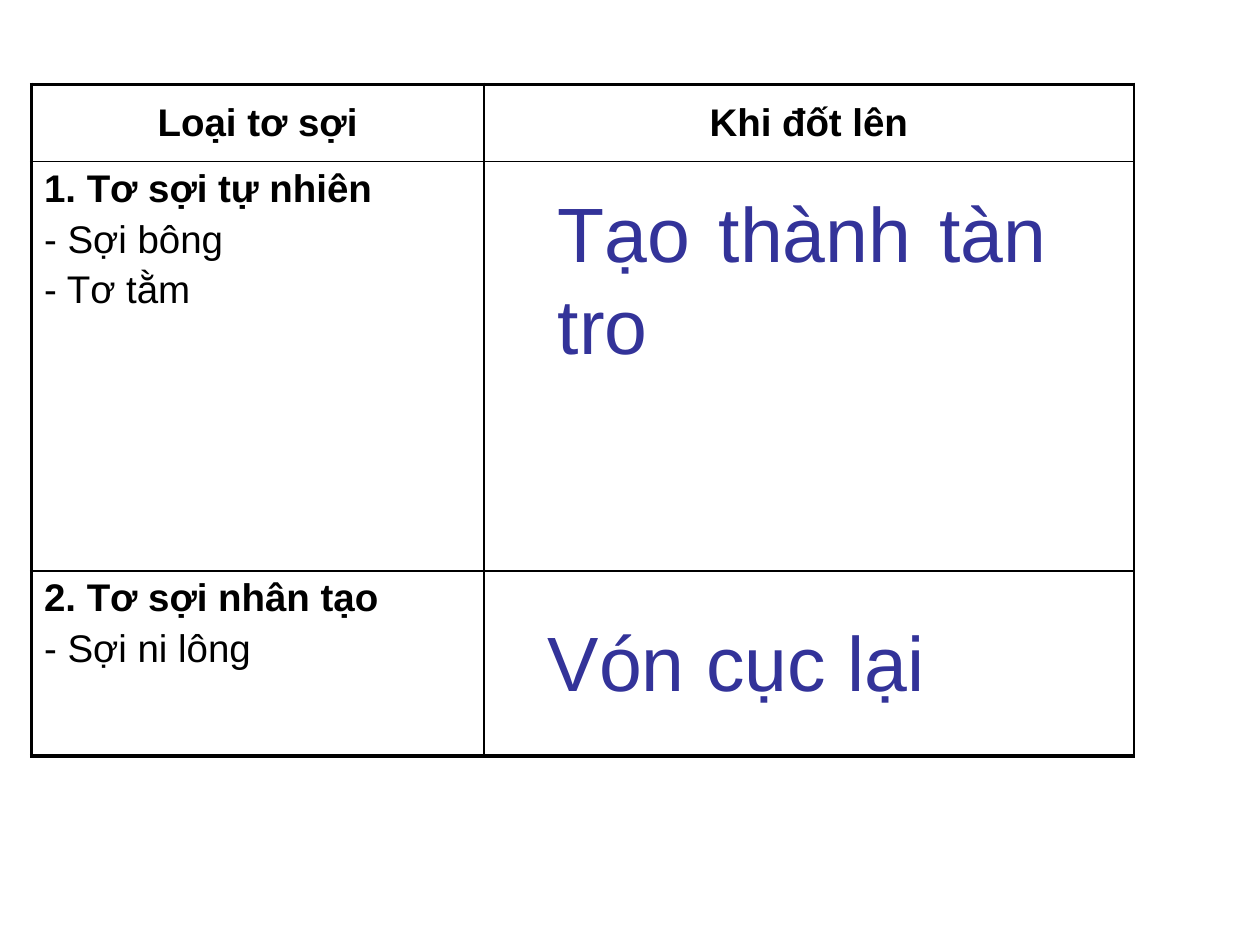
from lxml.etree import SubElement
from pptx import Presentation
from pptx.dml.color import RGBColor
from pptx.enum.text import MSO_ANCHOR as ANCHOR, MSO_AUTO_SIZE as AUTO, PP_ALIGN as ALIGN
from pptx.oxml.ns import qn
from pptx.util import Inches, Pt

THEME = dict(font="Arial", ink="000000", answer="333399", body=22, large=44, thick=2.25, thin=1)


def write(tf, lines, size=THEME["body"], color=THEME["ink"], bold_first=False, align=ALIGN.LEFT):
    for i, line in enumerate(lines):
        p = tf.paragraphs[0] if i == 0 else tf.add_paragraph()
        p.alignment = align
        before = SubElement(p._p.get_or_add_pPr(), qn("a:spcBef"))
        SubElement(before, qn("a:spcPct"), val="20000")
        r = p.add_run()
        r.text = line
        r.font.name = THEME["font"]
        r.font.size = Pt(size)
        r.font.bold = bold_first and i == 0
        r.font.color.rgb = RGBColor.from_string(color)


def border(cell, side, width):
    ln = SubElement(cell._tc.get_or_add_tcPr(), qn(f"a:ln{side}"), w=str(Pt(width)))
    fill = SubElement(ln, qn("a:solidFill"))
    SubElement(fill, qn("a:srgbClr"), val=THEME["ink"])


prs = Presentation()
prs.slide_width, prs.slide_height = Inches(10), Inches(7.5)
s = prs.slides.add_slide(prs.slide_layouts[6])

col_widths = [3.59, 5.16]
row_heights = [0.61, 3.25, 1.47]
rows = [
    [["Loại tơ sợi"], ["Khi đốt lên"]],
    [["1. Tơ sợi tự nhiên", "- Sợi bông", "- Tơ tằm"], []],
    [["2. Tơ sợi nhân tạo", "- Sợi ni lông"], []],
]
table = s.shapes.add_table(
    len(rows), len(col_widths), Inches(0.25), Inches(0.67),
    Inches(sum(col_widths)), Inches(sum(row_heights))).table
table.first_row = table.horz_banding = False
for column, width in zip(table.columns, col_widths):
    column.width = Inches(width)
for row, height in zip(table.rows, row_heights):
    row.height = Inches(height)

for i, row in enumerate(rows):
    for j, lines in enumerate(row):
        cell = table.cell(i, j)
        header = i == 0
        cell.vertical_anchor = ANCHOR.MIDDLE if header else ANCHOR.TOP
        write(cell.text_frame, lines, bold_first=True, align=ALIGN.CENTER if header else ALIGN.LEFT)
        outer = {"L": j == 0, "R": False, "T": header, "B": i == len(rows) - 1}
        for side, is_outer in outer.items():
            border(cell, side, THEME["thick" if is_outer else "thin"])
        cell.fill.background()

answers = [
    ("Tạo thành tàn tro", 4.33, 1.42, 4.08, 1.58),
    ("Vón cục lại", 4.25, 4.83, 3.75, 0.84),
]
for text, *box in answers:
    tf = s.shapes.add_textbox(*map(Inches, box)).text_frame
    tf.word_wrap = True
    tf.auto_size = AUTO.SHAPE_TO_FIT_TEXT
    write(tf, [text], size=THEME["large"], color=THEME["answer"], align=ALIGN.JUSTIFY)

prs.save("out.pptx")
